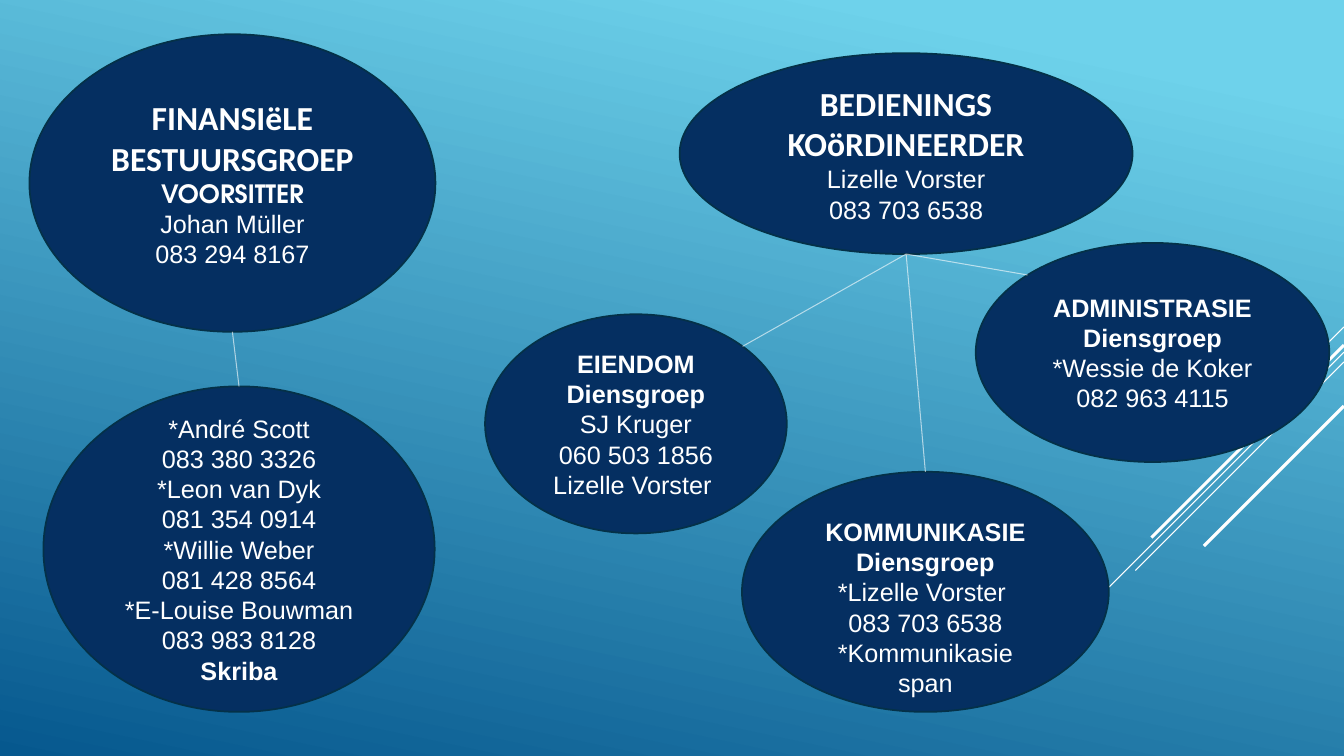
from math import sqrt
from lxml.etree import SubElement
from pptx import Presentation
from pptx.dml.color import RGBColor
from pptx.enum.shapes import MSO_CONNECTOR as Link, MSO_SHAPE as Shape
from pptx.enum.text import MSO_ANCHOR as Anchor, PP_ALIGN as Align
from pptx.oxml.ns import qn
from pptx.util import Pt

WHITE = RGBColor(0xFF, 0xFF, 0xFF)
NAVY = RGBColor(0x05, 0x2F, 0x61)
EDGE = RGBColor(0x04, 0x31, 0x48)
SKY = RGBColor(0x6E, 0xD2, 0xEB)
DEEP = RGBColor(0x06, 0x58, 0x8E)

WIDE, HIGH = 960, 540
HEAD = ("Calibri", 24, True)
ROLE = ("TeX Gyre Adventor", 18, True)
BOLD = ("Arial", 18, True)
BODY = ("Arial", 18, False)


def paint(slide):
    """Fill the background with the blue gradient."""
    fill = slide.background.fill
    fill.gradient()
    fill.gradient_angle = 258
    for stop, (tint, place) in zip(fill.gradient_stops, ((SKY, 0.1), (DEEP, 1))):
        stop.color.rgb = tint
        stop.position = place


def draw_line(slide, start, end, width=0.75, alpha=100):
    """Draw a white line between two points."""
    line = slide.shapes.add_connector(Link.STRAIGHT, *map(Pt, start + end))
    line.line.color.rgb = WHITE
    line.line.width = Pt(width)
    if alpha < 100:
        tint = line.line._get_or_add_ln().find(".//" + qn("a:srgbClr"))
        SubElement(tint, qn("a:alpha"), val=str(alpha * 1000))
    SubElement(line._element.spPr, qn("a:effectLst"))
    return line


def draw_rays(slide, box):
    """Draw the diagonal rays that leave the right edge of the box."""
    left, top, width, height = box
    right = left + width
    rays = ((233.5, 72, 0.75), (251.5, 234.5, 0.75), (258.5, 149, 0.75),
            (246.5, 137.5, 2.25), (290, 100, 2.25))
    for drop, reach, weight in rays:
        y = top + drop
        draw_line(slide, (right, y), (right - reach, y + reach), weight)


def draw_oval(slide, box, rows, shift=0):
    """Draw one group as an ellipse with centred rows of text."""
    oval = slide.shapes.add_shape(Shape.OVAL, *map(Pt, box))
    oval.shadow.inherit = False
    oval.fill.solid()
    oval.fill.fore_color.rgb = NAVY
    oval.line.color.rgb = EDGE
    oval.line.width = Pt(1.25)
    frame = oval.text_frame
    frame.word_wrap = True
    frame.vertical_anchor = Anchor.MIDDLE
    frame.margin_top = Pt(3.6 + shift)
    frame.text = "\n".join(text for text, style in rows)
    for para, (text, style) in zip(frame.paragraphs, rows):
        para.alignment = Align.CENTER
        font = para.runs[0].font
        font.name, font.size, font.bold = style[0], Pt(style[1]), style[2]
        font.color.rgb = WHITE
    return oval


def rim(box, across, down):
    """Return a point on the rim, given a direction from the centre."""
    left, top, width, height = box
    norm = sqrt(across ** 2 + down ** 2)
    return (left + width / 2 * (1 + across / norm),
            top + height / 2 * (1 + down / norm))


def draw_board(slide, box):
    """Draw the finance group and its members."""
    left, top, width, height = box
    chair = (left, top, 290, 212.5)
    team = (left + 10, top + 251.5, 279.5, 232.5)
    draw_oval(slide, chair, (
        ("FINANSIëLE", HEAD), ("BESTUURSGROEP", HEAD), ("VOORSITTER", ROLE),
        ("Johan Müller", BODY), ("083 294 8167", BODY)))
    names = ("*André Scott", "083 380 3326", "*Leon van Dyk", "081 354 0914",
             "*Willie Weber", "081 428 8564", "*E-Louise Bouwman",
             "083 983 8128")
    rows = [(name, BODY) for name in names] + [("Skriba", BOLD)]
    crew = draw_oval(slide, team, rows)
    line = draw_line(slide, rim(chair, 0, 1), rim(team, 0, -1), alpha=60)
    line.end_connect(crew, 0)


def draw_service(slide, box):
    """Draw the coordinator and the three service groups."""
    left, top, width, height = box
    lead = (left + 139, top, 323.5, 143.5)
    draw_oval(slide, lead, (
        ("BEDIENINGS", HEAD), ("KOöRDINEERDER", HEAD),
        ("Lizelle Vorster", BODY), ("083 703 6538", BODY)))
    groups = (
        ((left, top + 186.5, 215.5, 156.5), "EIENDOM",
         ("SJ Kruger", "060 503 1856", "Lizelle Vorster "), 0, 1),
        ((left + 350.5, top + 135.5, 252.5, 156.5), "ADMINISTRASIE",
         ("*Wessie de Koker", "082 963 4115"), 0, -1),
        ((left + 183.5, top + 299, 262, 171.5), "KOMMUNIKASIE",
         ("*Lizelle Vorster ", "083 703 6538", "*Kommunikasie", "span"),
         21.6, 0))
    ovals = []
    for area, title, names, shift, side in groups:
        rows = [(title, BOLD), ("Diensgroep", BOLD)]
        rows += [(name, BODY) for name in names]
        ovals.append(draw_oval(slide, area, rows, shift))
    for oval, (area, title, names, shift, side) in zip(ovals, groups):
        line = draw_line(slide, rim(lead, 0, 1), rim(area, side, -1), alpha=60)
        if side == 0:
            line.end_connect(oval, 0)


def main():
    """Build and save the slide."""
    deck = Presentation()
    deck.slide_width, deck.slide_height = Pt(WIDE), Pt(HIGH)
    slide = deck.slides.add_slide(deck.slide_layouts[6])
    paint(slide)
    draw_rays(slide, (0, 0, WIDE, HIGH))
    draw_board(slide, (21, 24.5, 290, 484))
    draw_service(slide, (346.5, 38, 603, 470.5))
    deck.save("out.pptx")


if __name__ == "__main__":
    main()
